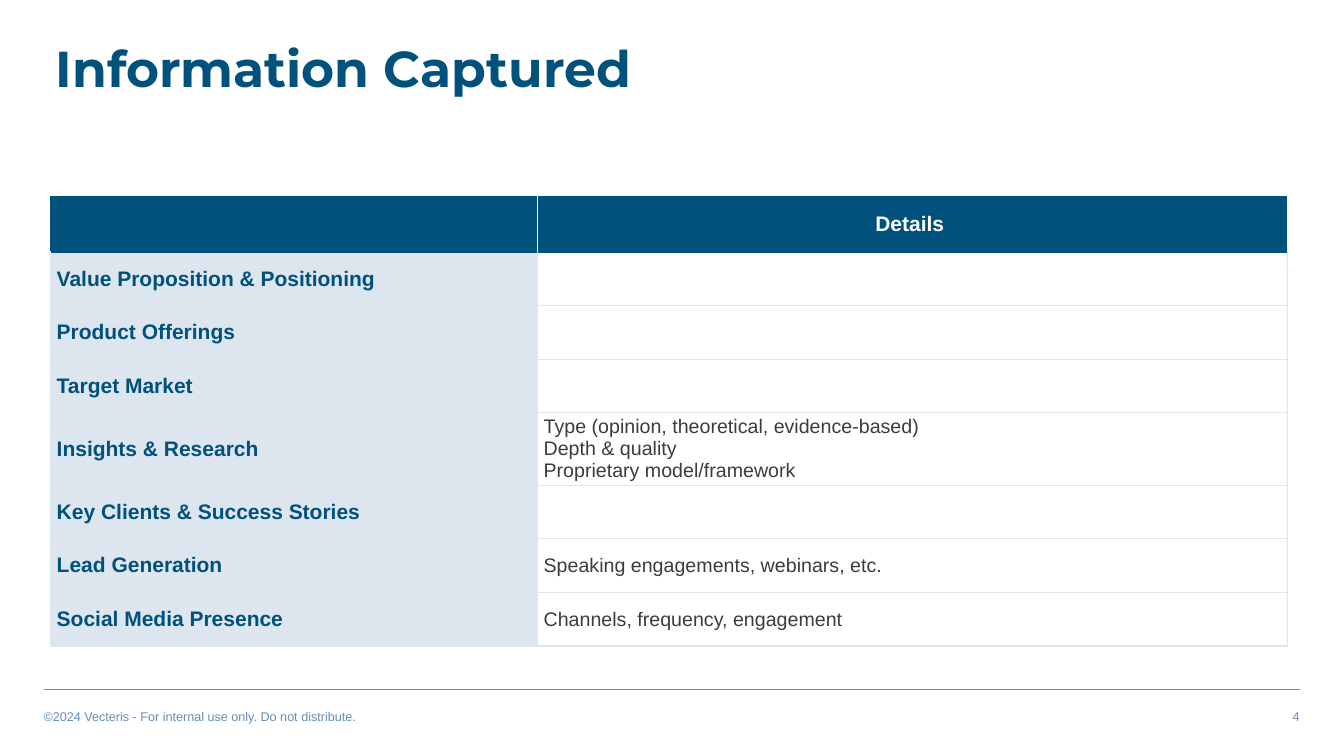
from dataclasses import dataclass

import lxml.etree
import pptx
import pptx.dml.color
import pptx.enum.shapes
import pptx.enum.text
import pptx.oxml.ns
import pptx.util

Cm = pptx.util.Cm
Pt = pptx.util.Pt
Align = pptx.enum.text.PP_ALIGN
Anchor = pptx.enum.text.MSO_ANCHOR
qn = pptx.oxml.ns.qn


@dataclass(frozen=True)
class Theme:
    navy: str = "00517C"
    pale: str = "DDE6EF"
    steel: str = "668EB9"
    ink: str = "3A3C41"
    white: str = "FFFFFF"
    heading_font: str = "Montserrat"
    body_font: str = "Arial"
    title_size: int = 36
    label_size: int = 15
    detail_size: int = 14
    footer_size: int = 9


@dataclass(frozen=True)
class Box:
    left: float
    top: float
    width: float
    height: float

    def lengths(self):
        return Cm(self.left), Cm(self.top), Cm(self.width), Cm(self.height)


THEME = Theme()
TOPICS = [
    ("Value Proposition & Positioning", []),
    ("Product Offerings", []),
    ("Target Market", []),
    ("Insights & Research", [
        "Type (opinion, theoretical, evidence-based)",
        "Depth & quality",
        "Proprietary model/framework",
    ]),
    ("Key Clients & Success Stories", []),
    ("Lead Generation", ["Speaking engagements, webinars, etc."]),
    ("Social Media Presence", ["Channels, frequency, engagement"]),
]


def rgb(value):
    return pptx.dml.color.RGBColor.from_string(value)


def write_text(text_frame, lines, *, size, color, font=THEME.body_font,
               bold=False, align=Align.LEFT, spacing=None):
    for index, line in enumerate(lines):
        paragraph = text_frame.paragraphs[0] if index == 0 else text_frame.add_paragraph()
        paragraph.alignment = align
        if spacing:
            paragraph.line_spacing = spacing
        run = paragraph.add_run()
        run.text = line
        run.font.name = font
        run.font.size = Pt(size)
        run.font.bold = bold
        run.font.color.rgb = rgb(color)


def format_cell(cell, fill, left, right, top, bottom):
    cell.fill.solid()
    cell.fill.fore_color.rgb = rgb(fill)
    cell.vertical_anchor = Anchor.MIDDLE
    cell.margin_left = cell.margin_right = Cm(0.15)
    cell.margin_top = cell.margin_bottom = Cm(0.08)
    properties = cell._tc.get_or_add_tcPr()
    edges = (("a:lnL", left), ("a:lnR", right), ("a:lnT", top), ("a:lnB", bottom))
    for position, (tag, color) in enumerate(edges):
        border = lxml.etree.Element(qn(tag), w=str(Pt(1)))
        solid = lxml.etree.SubElement(border, qn("a:solidFill"))
        lxml.etree.SubElement(solid, qn("a:srgbClr"), val=color)
        properties.insert(position, border)


def add_title(slide, box):
    title = slide.shapes.title
    title.left, title.top, title.width, title.height = box.lengths()
    text_frame = title.text_frame
    text_frame.auto_size = pptx.enum.text.MSO_AUTO_SIZE.NONE
    text_frame.vertical_anchor = Anchor.MIDDLE
    write_text(text_frame, ["Information Captured"], size=THEME.title_size,
               color=THEME.navy, font=THEME.heading_font, bold=True, spacing=0.9)


def add_topic_table(slide, box, label_width=12.27, header_height=1.4,
                    row_height=1.35):
    table = slide.shapes.add_table(len(TOPICS) + 1, 2, *box.lengths()).table
    table.columns[0].width = Cm(label_width)
    table.columns[1].width = Cm(box.width - label_width)
    plain_rows = len(TOPICS) - 1
    tall_height = box.height - header_height - plain_rows * row_height

    table.rows[0].height = Cm(header_height)
    navy, pale, white = THEME.navy, THEME.pale, THEME.white
    format_cell(table.cell(0, 0), navy, navy, white, navy, navy)
    format_cell(table.cell(0, 1), navy, white, white, navy, navy)
    write_text(table.cell(0, 1).text_frame, ["Details "], size=THEME.label_size,
               color=white, bold=True, align=Align.CENTER)

    for row, (topic, details) in enumerate(TOPICS, start=1):
        table.rows[row].height = Cm(tall_height if len(details) > 1 else row_height)
        top = navy if row == 1 else pale
        for column, fill in enumerate((pale, white)):
            format_cell(table.cell(row, column), fill, pale, pale, top, pale)
        write_text(table.cell(row, 0).text_frame, [topic], size=THEME.label_size,
                   color=navy, bold=True)
        write_text(table.cell(row, 1).text_frame, details, size=THEME.detail_size,
                   color=THEME.ink)


def add_footer(slide, box, text_offset=0.36, text_width=13.54, text_height=0.64):
    right = box.left + box.width
    rule = slide.shapes.add_connector(
        pptx.enum.shapes.MSO_CONNECTOR.STRAIGHT,
        Cm(box.left), Cm(box.top), Cm(right), Cm(box.top))
    rule.line.color.rgb = rgb(THEME.steel)
    rule.line.width = Pt(1)
    lxml.etree.SubElement(rule._element.spPr, qn("a:effectLst"))

    inset = 0.25
    notes = (
        ("©2024 Vecteris - For internal use only. Do not distribute.",
         box.left - inset, Align.LEFT),
        ("4", right + inset - text_width, Align.RIGHT),
    )
    for text, left, align in notes:
        note_box = Box(left, box.top + text_offset, text_width, text_height)
        text_frame = slide.shapes.add_textbox(*note_box.lengths()).text_frame
        text_frame.word_wrap = True
        write_text(text_frame, [text], size=THEME.footer_size, color=THEME.steel,
                   align=align)


def main():
    presentation = pptx.Presentation()
    presentation.slide_width = Cm(33.87)
    presentation.slide_height = Cm(19.05)
    slide = presentation.slides.add_slide(presentation.slide_layouts[5])
    slide.background.fill.solid()
    slide.background.fill.fore_color.rgb = rgb(THEME.white)
    add_title(slide, Box(1.15, 0.84, 21.64, 1.93))
    add_topic_table(slide, Box(1.28, 4.95, 31.17, 11.33))
    add_footer(slide, Box(1.1, 17.37, 31.65, 1))
    presentation.save("out.pptx")


if __name__ == "__main__":
    main()
